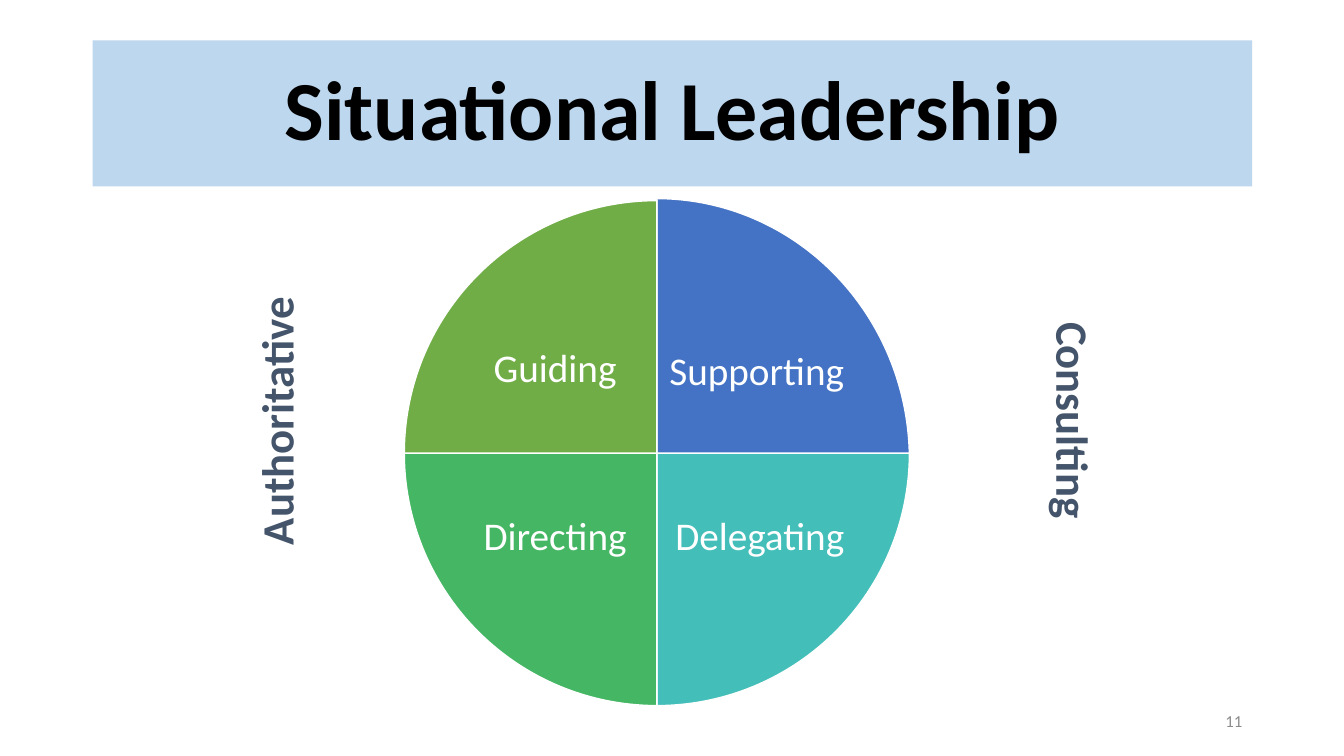
import pptx
import pptx.dml.color
import pptx.enum.shapes
import pptx.enum.text
import pptx.util

Inches = pptx.util.Inches
ALIGN = pptx.enum.text.PP_ALIGN
SHAPE = pptx.enum.shapes.MSO_SHAPE


def rgb(value):
    """Return the colour for a hex string."""
    return pptx.dml.color.RGBColor.from_string(value)


class Deck:
    """Hold the style and the current slide."""

    font = "Calibri"
    white = "FFFFFF"
    black = "000000"
    slate = "44546A"
    grey = "8C8C8C"
    band = "BDD7EE"

    def __init__(self):
        """Start a presentation with one blank slide."""
        self.prs = pptx.Presentation()
        self.prs.slide_width = Inches(13.33)
        self.prs.slide_height = Inches(7.5)
        self.s = self.prs.slides.add_slide(self.prs.slide_layouts[6])

    def set_text(self, sp, text, size, color, bold=False, align=ALIGN.CENTER, spacing=1.0):
        """Put one formatted paragraph into a shape."""
        tf = sp.text_frame
        tf.word_wrap = True
        tf.vertical_anchor = pptx.enum.text.MSO_ANCHOR.MIDDLE
        tf.text = text
        p = tf.paragraphs[0]
        p.alignment = align
        p.line_spacing = spacing
        r = p.runs[0]
        r.font.name = self.font
        r.font.size = pptx.util.Pt(size)
        r.font.bold = bold
        r.font.color.rgb = rgb(color)

    def shape(self, kind, box, fill):
        """Add a filled preset shape without outline."""
        sp = self.s.shapes.add_shape(kind, *map(Inches, box))
        sp.shadow.inherit = False
        sp.fill.solid()
        sp.fill.fore_color.rgb = rgb(fill)
        sp.line.fill.background()
        return sp

    def title(self, text, box):
        """Add the title band."""
        sp = self.shape(SHAPE.RECTANGLE, box, self.band)
        self.set_text(sp, text, 60, self.black, bold=True, spacing=0.9)

    def quarter(self, box, start, fill):
        """Add a quarter of the pie that begins at a clockwise angle."""
        sp = self.shape(SHAPE.PIE, box, fill)
        sp.adjustments[0] = start * 0.6
        sp.adjustments[1] = (start + 90) % 360 * 0.6
        sp.line.color.rgb = rgb(self.white)
        sp.line.width = pptx.util.Pt(1)

    def text(self, text, box, size, color, rotation=0, inset=None, **style):
        """Add a text box."""
        sp = self.s.shapes.add_textbox(*map(Inches, box))
        sp.rotation = rotation
        self.set_text(sp, text, size, color, **style)
        if inset is not None:
            tf = sp.text_frame
            tf.margin_left = tf.margin_right = Inches(inset)
            tf.margin_top = tf.margin_bottom = Inches(inset)


def main():
    """Build and save the slide."""
    deck = Deck()
    deck.title("Situational Leadership", (0.92, 0.4, 11.5, 1.45))

    circle = (4.01, 1.99, 5.01, 5.01)
    styles = [
        ("Supporting", 270, "4472C4", (4.01, 1.97, 5.01, 5.18), (6.58, 2.93, 1.85, 1.54)),
        ("Delegating", 0, "43BEB9", circle, (6.61, 4.59, 1.85, 1.49)),
        ("Directing", 90, "45B664", circle, (4.58, 4.59, 1.85, 1.49)),
        ("Guiding", 180, "70AD47", circle, (4.58, 2.92, 1.85, 1.49)),
    ]
    for name, start, fill, pie_box, label_box in styles:
        deck.quarter(pie_box, start, fill)
        deck.text(name, label_box, 28, deck.white, inset=0.04, spacing=0.9)

    deck.text("Consulting", (8.9, 3.85, 3.51, 0.64), 32, deck.slate, rotation=90, bold=True)
    deck.text("Authoritative", (1.11, 3.56, 3.25, 0.64), 32, deck.slate, rotation=270,
              bold=True, align=ALIGN.LEFT)
    deck.text("11", (9.42, 6.95, 3, 0.4), 12, deck.grey, align=ALIGN.RIGHT)
    deck.prs.save("out.pptx")


if __name__ == "__main__":
    main()
